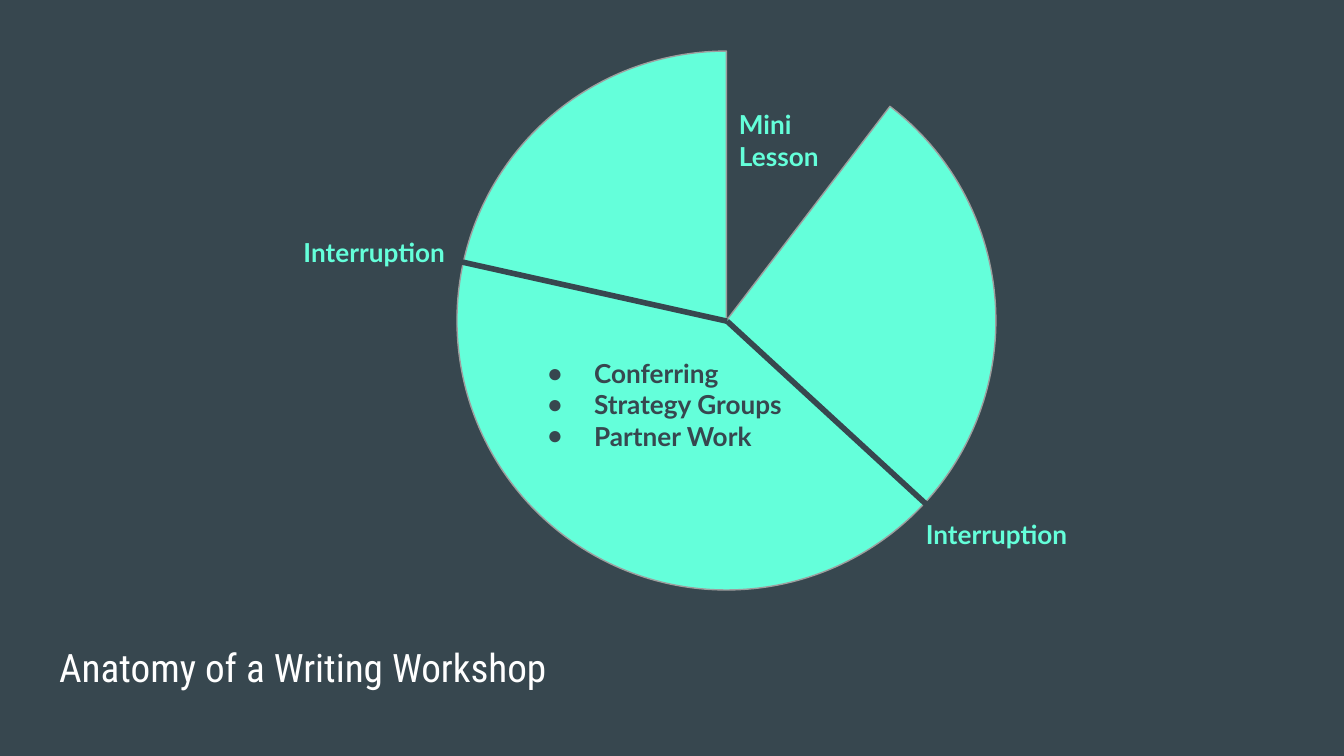
"""Build the writing workshop slide with its pie diagram and labels."""
import pptx
import pptx.dml.color
import pptx.enum.shapes
import pptx.enum.text
import pptx.oxml.ns
import pptx.util
from lxml import etree
from pptx.util import Inches

SLATE = pptx.dml.color.RGBColor(0x37, 0x47, 0x4F)
MINT = pptx.dml.color.RGBColor(0x64, 0xFF, 0xDA)
GRAY = pptx.dml.color.RGBColor(0x9E, 0x9E, 0x9E)
WHITE = pptx.dml.color.RGBColor(0xFF, 0xFF, 0xFF)
TOP = pptx.enum.text.MSO_ANCHOR.TOP
MIDDLE = pptx.enum.text.MSO_ANCHOR.MIDDLE
qn = pptx.oxml.ns.qn


def place(shape, left, top, width, height):
    shape.left, shape.top = Inches(left), Inches(top)
    shape.width, shape.height = Inches(width), Inches(height)


def write(shape, lines, font_name, size, color, bold, anchor):
    frame = shape.text_frame
    frame.word_wrap = True
    frame.auto_size = pptx.enum.text.MSO_AUTO_SIZE.NONE
    frame.vertical_anchor = anchor
    frame.margin_left = frame.margin_right = Inches(0.1)
    frame.margin_top = frame.margin_bottom = Inches(0.1)
    for index, line in enumerate(lines):
        paragraph = frame.add_paragraph() if index else frame.paragraphs[0]
        paragraph.alignment = pptx.enum.text.PP_ALIGN.LEFT
        paragraph.space_before = pptx.util.Pt(0)
        run = paragraph.add_run()
        run.text = line
        run.font.name = font_name
        run.font.size = pptx.util.Pt(size)
        run.font.bold = bold
        run.font.color.rgb = color


presentation = pptx.Presentation()
presentation.slide_width = Inches(10)
presentation.slide_height = Inches(10) * 9 // 16
slide = presentation.slides.add_slide(presentation.slide_layouts[1])
slide.background.fill.solid()
slide.background.fill.fore_color.rgb = SLATE

title = slide.shapes.title
place(title, 0.34, 4.63, 6.56, 0.66)
write(title, ["Anatomy of a Writing Workshop"], "Roboto Condensed", 21, WHITE, False, MIDDLE)

pie = slide.shapes.add_shape(
    pptx.enum.shapes.MSO_SHAPE.PIE, Inches(3.4), Inches(0.38), Inches(4.01), Inches(4.01)
)
pie.adjustments[0] = 184.42
pie.adjustments[1] = 162
pie.shadow.inherit = False
pie.fill.solid()
pie.fill.fore_color.rgb = MINT
pie.line.color.rgb = GRAY
pie.line.width = pptx.util.Pt(0.75)

for end_left, end_top in [(6.9, 3.76), (3.26, 1.91)]:
    divider = slide.shapes.add_connector(
        pptx.enum.shapes.MSO_CONNECTOR.STRAIGHT,
        Inches(5.41), Inches(2.39), Inches(end_left), Inches(end_top),
    )
    divider.line.color.rgb = SLATE
    divider.line.width = pptx.util.Pt(3)
    etree.SubElement(divider.element.spPr, qn("a:effectLst"))

for left, top, lines in [
    (6.79, 3.76, ["Interruption"]),
    (2.16, 1.66, ["Interruption"]),
    (5.4, 0.71, ["Mini", "Lesson"]),
]:
    label = slide.shapes.add_textbox(Inches(left), Inches(top), Inches(1.5), Inches(0.64))
    write(label, lines, "Lato", 14, MINT, True, TOP)

activities = slide.placeholders[1]
place(activities, 3.82, 2.56, 2.15, 0.85)
write(activities, ["Conferring", "Strategy Groups", "Partner Work"], "Lato", 14, SLATE, True, TOP)
for properties in activities.element.iter(qn("a:pPr")):
    properties.set("marL", str(Inches(0.5)))
    properties.set("indent", str(Inches(-0.35)))
    bullet_color = etree.SubElement(properties, qn("a:buClr"))
    etree.SubElement(bullet_color, qn("a:srgbClr"), val=str(SLATE))
    etree.SubElement(properties, qn("a:buChar"), char="●")
activities.element.getparent().append(activities.element)

presentation.save("out.pptx")
